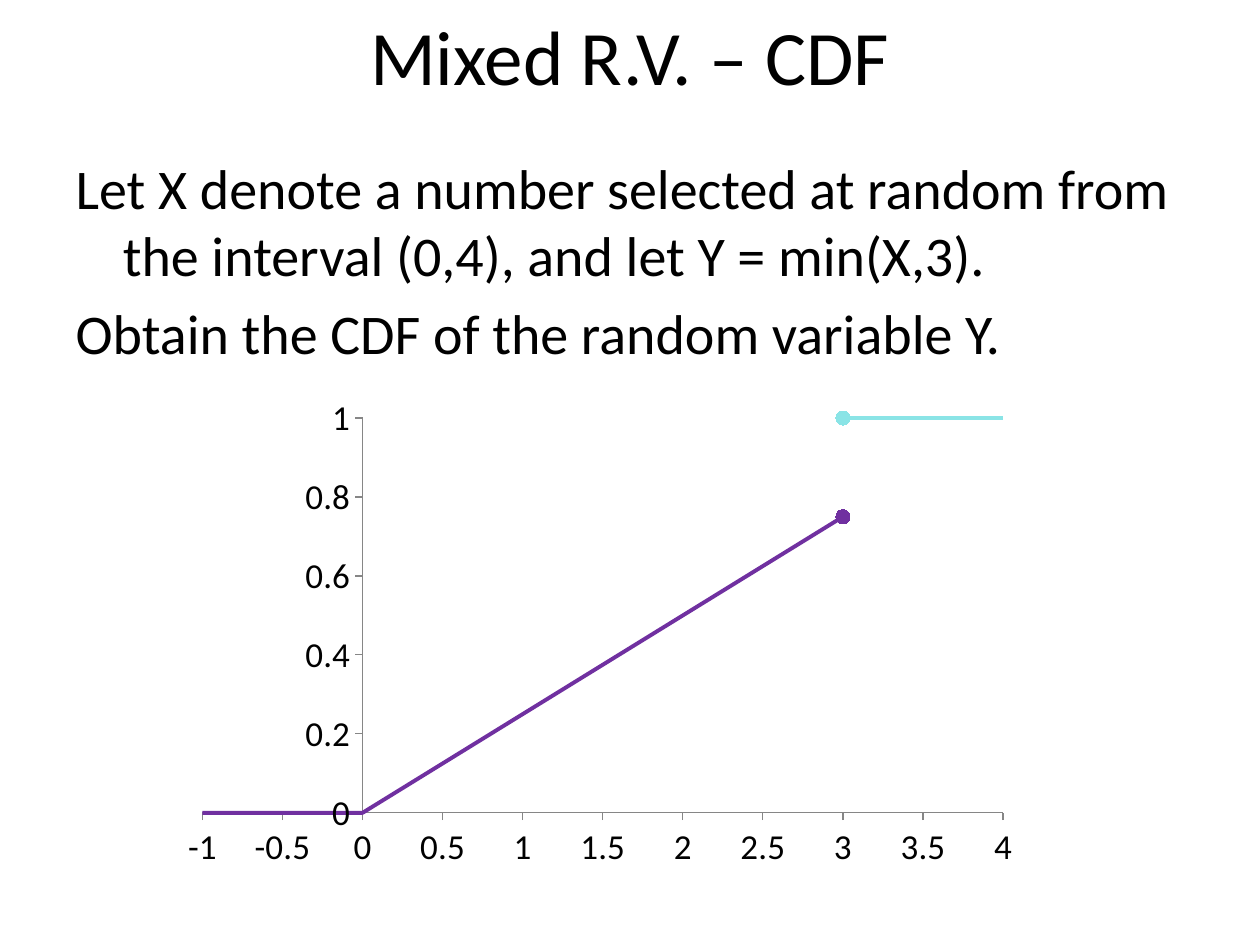
from lxml import etree
from pptx import Presentation
from pptx import util as u
from pptx.chart import data as cd
from pptx.dml import color as col
from pptx.enum import chart as ch
from pptx.oxml import ns

FONT = "Calibri"
LINES = ["Let X denote a number selected at random from the interval (0,4), "
         "and let Y = min(X,3).",
         "Obtain the CDF of the random variable Y."]
PURPLE, CYAN, GREY = "7030A0", "8AE4E6", "868686"
SERIES = [("Series 1", PURPLE, [(-5, 0), (0, 0), (3, 0.75)], 2),
          ("Series 2", CYAN, [(3, 1), (4.5, 1)], 0)]


def rgb(code):
    """Turn a hex string into a colour."""
    return col.RGBColor.from_string(code)


def style(font, size):
    """Set face, size and black colour of a font."""
    font.name, font.size = FONT, u.Pt(size)
    font.color.rgb = rgb("000000")


def place(shape, *box):
    """Move a shape to left, top, width, height in points."""
    shape.left, shape.top, shape.width, shape.height = map(u.Pt, box)


def write(shape, lines, size):
    """Fill a placeholder with one paragraph per line."""
    frame = shape.text_frame
    frame.text = "\n".join(lines)
    for para in frame.paragraphs:
        for run in para.runs:
            style(run.font, size)


def indent(shape):
    """Give plain paragraphs a hanging indent without bullets."""
    for para in shape.text_frame.paragraphs:
        prop = para._p.get_or_add_pPr()
        prop.set("marL", str(u.Pt(27)))
        prop.set("indent", str(u.Pt(-27)))
        etree.SubElement(prop, ns.qn("a:buNone"))


def scale(axis, low, high, step):
    """Set range, ticks and look of an axis."""
    axis.minimum_scale, axis.maximum_scale = low, high
    axis.major_unit = step
    axis.has_major_gridlines = False
    axis.major_tick_mark = ch.XL_TICK_MARK.OUTSIDE
    axis.minor_tick_mark = ch.XL_TICK_MARK.NONE
    axis.format.line.color.rgb = rgb(GREY)
    axis.format.line.width = u.Pt(0.75)
    style(axis.tick_labels.font, 20)


def frame(chart, **box):
    """Fix the inner plot area as fractions of the chart."""
    area = chart._chartSpace.chart.plotArea
    for old in area.findall(ns.qn("c:layout")):
        area.remove(old)
    layout = etree.Element(ns.qn("c:layout"))
    area.insert(0, layout)
    man = etree.SubElement(layout, ns.qn("c:manualLayout"))
    vals = dict(layoutTarget="inner", xMode="edge", yMode="edge", **box)
    for key, val in vals.items():
        etree.SubElement(man, ns.qn("c:" + key)).set("val", str(val))


def trace(line, hue, spot):
    """Colour a line and put a purple dot on one of its points."""
    line.smooth = False
    line.format.line.color.rgb = rgb(hue)
    line.format.line.width = u.Pt(2.25)
    line.marker.style = ch.XL_MARKER_STYLE.NONE
    point = line.points[spot]
    point.format.line.color.rgb = rgb(hue)
    point.format.line.width = u.Pt(2.25)
    dot = point.marker
    dot.style, dot.size = ch.XL_MARKER_STYLE.CIRCLE, 8
    dot.format.fill.solid()
    dot.format.fill.fore_color.rgb = rgb(PURPLE)
    dot.format.line.color.rgb = rgb(PURPLE)


def plot(slide):
    """Draw the CDF as a scatter chart."""
    data = cd.XyChartData()
    for name, _, points, _ in SERIES:
        line = data.add_series(name)
        for x, y in points:
            line.add_data_point(x, y)
    kind = ch.XL_CHART_TYPE.XY_SCATTER_LINES_NO_MARKERS
    box = map(u.Pt, (96, 222, 492, 282))
    chart = slide.shapes.add_chart(kind, *box, data).chart
    chart.has_legend = chart.has_title = False
    style(chart.font, 10)
    chart.plots[0].vary_by_categories = False
    scale(chart.category_axis, -1, 4, 0.5)
    scale(chart.value_axis, 0, 1, 0.2)
    frame(chart, x=0.04, y=0.06, w=0.93, h=0.8)
    for line, (_, hue, _, spot) in zip(chart.plots[0].series, SERIES):
        trace(line, hue, spot)


def main():
    """Build and save the slide."""
    deck = Presentation()
    deck.slide_width, deck.slide_height = u.Pt(720), u.Pt(540)
    slide = deck.slides.add_slide(deck.slide_layouts[1])
    title, body = slide.placeholders
    place(title, 36, 0, 648, 63)
    write(title, ["Mixed R.V. – CDF"], 44)
    place(body, 36, 84, 648, 444)
    write(body, LINES, 32)
    indent(body)
    plot(slide)
    deck.save("out.pptx")


if __name__ == "__main__":
    main()
